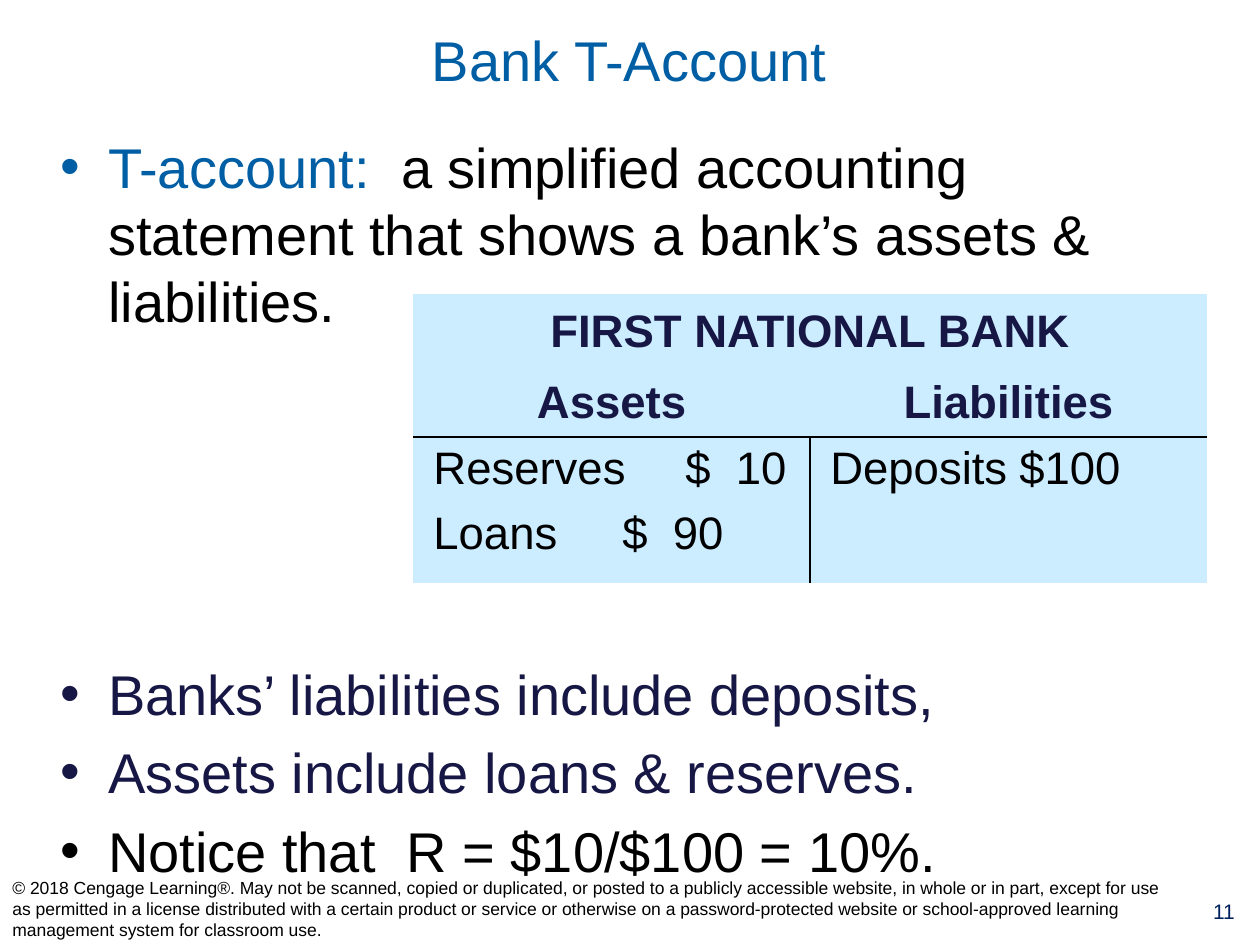
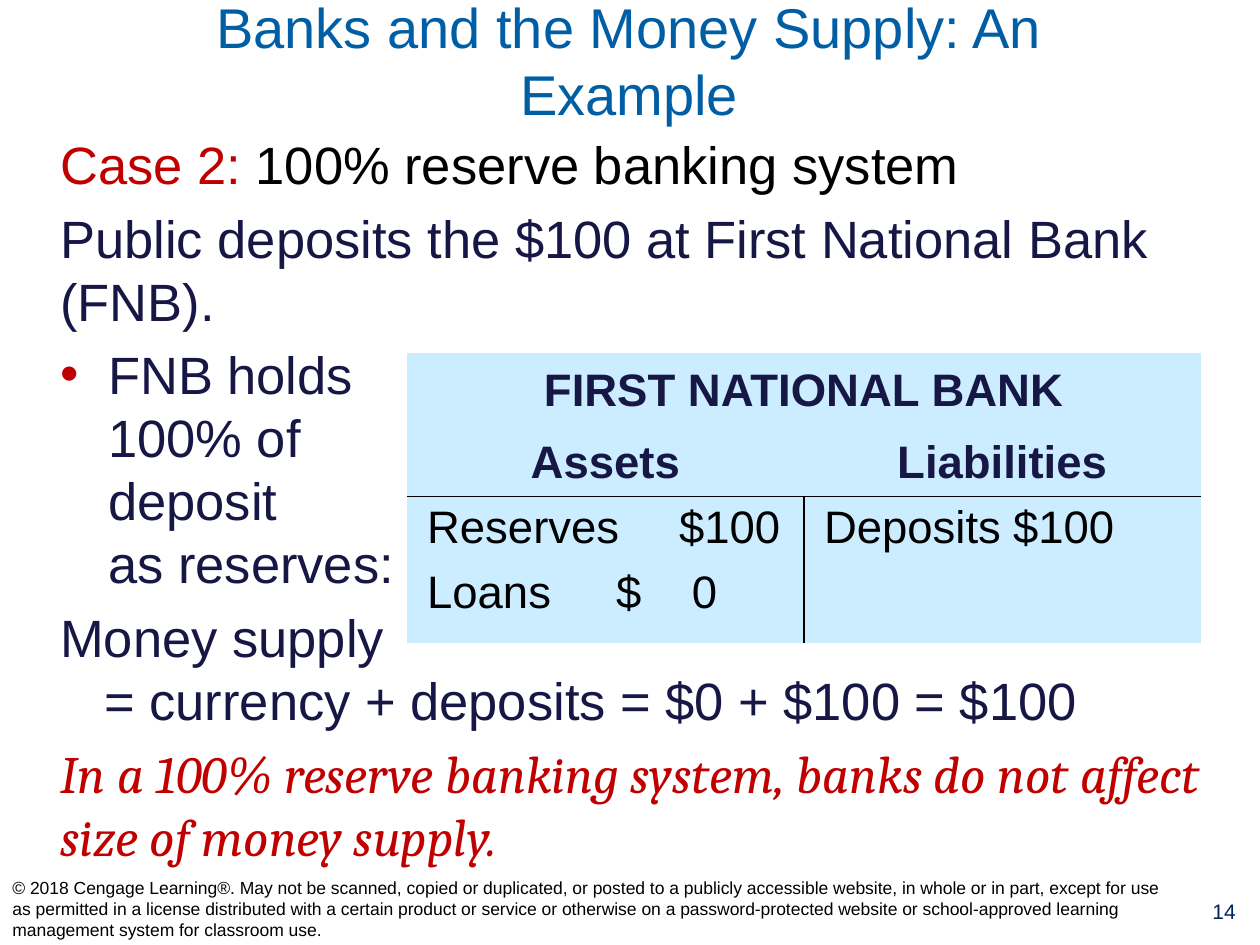
from dataclasses import dataclass

from lxml.etree import SubElement
from pptx import Presentation
from pptx.dml.color import RGBColor
from pptx.enum.text import MSO_ANCHOR as Anchor, PP_ALIGN as Align
from pptx.oxml.ns import qn
from pptx.util import Inches, Pt


@dataclass(frozen=True)
class Theme:
    font: str = "Arial"
    accent_font: str = "Cambria"
    blue: str = "005EA4"
    navy: str = "171745"
    red: str = "C00000"
    black: str = "000000"
    page_blue: str = "002060"
    cell: str = "CCECFF"
    title_pt: int = 32
    table_pt: int = 26
    page_pt: int = 12
    footer_pt: int = 10


T = Theme()
NO_TABLE_STYLE = "{2D5ABB26-0587-4C30-8999-92F81FD0307C}"
FOOTER = (
    "© 2018 Cengage Learning®. May not be scanned, copied or duplicated, or posted to a "
    "publicly accessible website, in whole or in part, except for use as permitted in a "
    "license distributed with a certain product or service or otherwise on a "
    "password-protected website or school-approved learning management system for "
    "classroom use."
)
BANK = "FIRST NATIONAL BANK"
SIDES = ("Assets", "Liabilities")
AMOUNT_TABS = (2.06, 2.13)

# Each body paragraph: spans of (text, colour), then optional settings.
SLIDES = [
    {
        "title": "Bank T-Account",
        "page": 11,
        "body_pt": 32,
        "body": [
            {"spans": [("T-account:  ", T.blue),
                       ("a simplified accounting statement that shows a bank’s "
                        "assets & liabilities.", T.black)], "bullet": T.blue},
            {"spans": [("Banks’ liabilities include deposits,", T.navy)],
             "bullet": T.navy, "before": 186},
            {"spans": [("Assets include loans & reserves.", T.navy)], "bullet": T.navy},
            {"spans": [("Notice that  R = $10/$100 = 10%.", T.black)], "bullet": T.black},
        ],
        "account_at": (3.28, 2.33),
        "account": (["Reserves\t$  10", "Loans  \t$  90"], ["Deposits\t$100"]),
    },
    {
        "title": "Banks and the Money Supply: An Example",
        "page": 14,
        "body_pt": 30,
        "body": [
            {"spans": [("Case 2:", T.red), (" 100% reserve banking system", T.black)]},
            {"spans": [("Public deposits the $100 at First National Bank (FNB).", T.navy)]},
            {"spans": [("FNB holds\n100% of\ndeposit\nas reserves:", T.navy)],
             "bullet": T.red},
            {"spans": [("Money supply", T.navy)]},
            {"spans": [("= currency + deposits = $0 + $100 = $100", T.navy)],
             "indent": 0.35, "before": 0},
            {"spans": [("In a 100% reserve banking system, banks do not affect size of "
                        "money supply.", T.red)], "accent": True},
        ],
        "account_at": (3.23, 2.8),
        "account": (["Reserves\t$100", "Loans  \t$    0"], ["Deposits\t$100"]),
    },
]


def style(p, size, color, bold=False, italic=False, font=T.font):
    for r in p.runs:
        r.font.name = font
        r.font.size = Pt(size)
        r.font.bold = bold
        r.font.italic = italic
        r.font.color.rgb = RGBColor.from_string(color)


def add_text(slide, box, text="", size=T.title_pt, color=T.black,
             align=Align.LEFT, anchor=Anchor.TOP):
    tf = slide.shapes.add_textbox(*map(Inches, box)).text_frame
    tf.word_wrap = True
    tf.vertical_anchor = anchor
    tf.text = text
    tf.paragraphs[0].alignment = align
    style(tf.paragraphs[0], size, color)
    return tf


def set_indent(p, left, first=0):
    pPr = p._p.get_or_add_pPr()
    pPr.set("marL", str(Inches(left)))
    pPr.set("indent", str(Inches(first)))
    return pPr


def add_bullet(p, color):
    pPr = set_indent(p, 0.38, -0.38)
    clr = SubElement(pPr, qn("a:buClr"))
    SubElement(clr, qn("a:srgbClr"), val=color)
    SubElement(pPr, qn("a:buFont"), typeface=T.font)
    SubElement(pPr, qn("a:buChar"), char="•")


def add_body(slide, paragraphs, size):
    tf = add_text(slide, (0.38, 1, 9.32, 6.05))
    for i, item in enumerate(paragraphs):
        p = tf.add_paragraph() if i else tf.paragraphs[0]
        if "bullet" in item:
            add_bullet(p, item["bullet"])
        elif "indent" in item:
            set_indent(p, item["indent"])
        (lead, color), *rest = item["spans"]
        p.text = lead
        accent = item.get("accent", False)
        style(p, size, color, italic=accent, font=T.accent_font if accent else T.font)
        for text, color in rest:
            r = p.add_run()
            r.text = text
            r.font.name, r.font.size = T.font, Pt(size)
            r.font.color.rgb = RGBColor.from_string(color)
        if i:
            p.space_before = Pt(item.get("before", 0.2 * size))


def set_borders(cell, sides):
    """Draw thin black lines on the given sides, named L, R, T or B in that order."""
    tcPr = cell._tc.get_or_add_tcPr()
    for i, side in enumerate(sides):
        ln = tcPr.makeelement(qn(f"a:ln{side}"), {"w": str(Pt(1))})
        fill = SubElement(ln, qn("a:solidFill"))
        SubElement(fill, qn("a:srgbClr"), val=T.black)
        tcPr.insert(i, ln)


def fill_header(cell, text):
    cell.text = text
    cell.vertical_anchor = Anchor.MIDDLE
    p = cell.text_frame.paragraphs[0]
    p.alignment = Align.CENTER
    style(p, T.table_pt, T.navy, bold=True)


def fill_entries(cell, entries, tab):
    tf = cell.text_frame
    for i, entry in enumerate(entries):
        p = tf.add_paragraph() if i else tf.paragraphs[0]
        tabs = SubElement(set_indent(p, 0.06), qn("a:tabLst"))
        SubElement(tabs, qn("a:tab"), pos=str(Inches(tab)), algn="l")
        p.text = entry
        style(p, T.table_pt, T.black)
        if i:
            p.space_before = Pt(0.3 * T.table_pt)


def add_t_account(slide, at, account):
    frame = slide.shapes.add_table(3, 2, *map(Inches, (*at, 6.3, 2.3)))
    table = frame.table
    tblPr = table._tbl.tblPr
    tblPr.find(qn("a:tableStyleId")).text = NO_TABLE_STYLE
    table.first_row = table.horz_banding = False
    for row, height in zip(table.rows, (0.6, 0.54, 1.16)):
        row.height = Inches(height)
    for cell in table.iter_cells():
        cell.fill.solid()
        cell.fill.fore_color.rgb = RGBColor.from_string(T.cell)
    table.cell(0, 0).merge(table.cell(0, 1))
    fill_header(table.cell(0, 0), BANK)
    for col, (side, entries, tab) in enumerate(zip(SIDES, account, AMOUNT_TABS)):
        fill_header(table.cell(1, col), side)
        set_borders(table.cell(1, col), "B")
        fill_entries(table.cell(2, col), entries, tab)
        set_borders(table.cell(2, col), ("RT", "LT")[col])


def add_slide(prs, content):
    s = prs.slides.add_slide(prs.slide_layouts[6])
    add_text(s, (0.73, 0.11, 8.53, 0.72), content["title"], T.title_pt, T.blue,
             Align.CENTER, Anchor.MIDDLE)
    add_body(s, content["body"], content["body_pt"])
    add_text(s, (9.43, 7.08, 0.57, 0.41), str(content["page"]), T.page_pt, T.page_blue,
             Align.CENTER)
    add_text(s, (0, 6.92, 9.41, 0.58), FOOTER, T.footer_pt, anchor=Anchor.MIDDLE)
    add_t_account(s, content["account_at"], content["account"])


def main():
    prs = Presentation()
    prs.slide_width, prs.slide_height = Inches(10), Inches(7.5)
    for content in SLIDES:
        add_slide(prs, content)
    prs.save("out.pptx")


if __name__ == "__main__":
    main()
